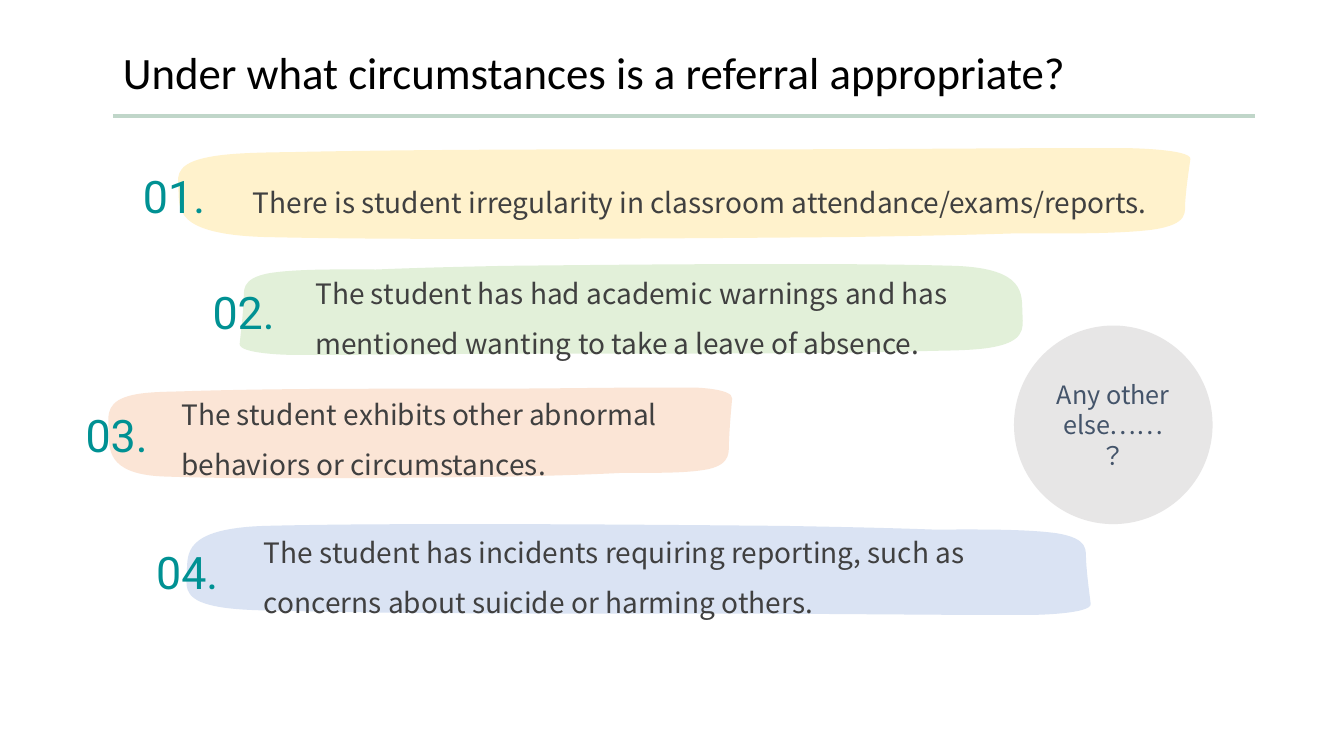
from pptx import Presentation
from pptx.dml.color import RGBColor
from pptx.enum.lang import MSO_LANGUAGE_ID as Lang
from pptx.enum.shapes import MSO_CONNECTOR as Link, MSO_SHAPE as Shape
from pptx.enum.text import MSO_ANCHOR as Anchor, MSO_AUTO_SIZE as Fit, PP_ALIGN as Align
from pptx.oxml.ns import qn
from pptx.util import Pt
from lxml.etree import SubElement

BLACK = RGBColor(0x00, 0x00, 0x00)
GRAY = RGBColor(0x40, 0x40, 0x40)
TEAL = RGBColor(0x00, 0x91, 0x93)
SLATE = RGBColor(0x44, 0x54, 0x6A)
SILVER = RGBColor(0xE7, 0xE6, 0xE6)
SAGE = RGBColor(0xC0, 0xD6, 0xC9)
CREAM = RGBColor(0xFF, 0xF2, 0xCC)
MINT = RGBColor(0xE2, 0xF0, 0xD9)
PEACH = RGBColor(0xFB, 0xE5, 0xD6)
SKY = RGBColor(0xDA, 0xE3, 0xF3)

SANS = "Noto Sans CJK SC"
TITLE = {"name": "Calibri", "size": Pt(32)}
NUMBER = {"name": "Roboto", "size": Pt(32)}
BODY = {"name": SANS, "size": Pt(20)}
ASIDE = {"name": SANS, "size": Pt(18), "language_id": Lang.TRADITIONAL_CHINESE}
PAD = dict.fromkeys(
    ("margin_left", "margin_top", "margin_right", "margin_bottom"), Pt(7.2))
MIDDLE = {"vertical_anchor": Anchor.MIDDLE, **PAD}

BAND = 64.8
START = (870, 0)
PIECES = [
    ((860, 0), (855, 0), (850, 0)),
    ((700, 1),),
    ((512, 2), (320, 0), (132, 4)),
    ((99, 5), (57, 4), (31, 11)),
    ((0, 19), (6, 35), (6, 47)),
    ((7, 67), (2, 95), (91, 98)),
    ((170, 100), (248, 100), (328, 100)),
    ((440, 100), (552, 99), (663, 98)),
    ((717, 97), (772, 96), (826, 94)),
    ((866, 94), (925, 95), (961, 90)),
    ((999, 84), (993, 70), (994, 59)),
    ((995, 43), (997, 28), (999, 12)),
    ((1000, 1), (938, 0), (938, 0)),
    ((938, 0), (910, 0), (870, 0)),
]

ROWS = [
    ("01.", "There is student irregularity in classroom attendance/exams/reports.",
     CREAM, (123.12, 105.84, 727.92), (False, False),
     (173.52, 105.84, 669.6), (95.04, 120.96, 97.92)),
    ("02.", "The student has had academic warnings and has mentioned wanting "
     "to take a leave of absence.",
     MINT, (170.64, 188.64, 563.04), (True, True),
     (218.16, 188.64, 531.36), (144.72, 203.76, 92.16)),
    ("03.", "The student exhibits other abnormal behaviors or circumstances.",
     PEACH, (74.88, 276.84, 448.56), (False, False),
     (122.4, 275.04, 426.96), (54, 291.6, 72.72)),
    ("04.", "The student has incidents requiring reporting, such as concerns "
     "about suicide or harming others.",
     SKY, (129.6, 374.4, 650.16), (False, True),
     (181.44, 373.68, 598.32), (104.4, 389.52, 87.84)),
]


def paint(shape, color):
    shape.shadow.inherit = False
    shape.fill.solid()
    shape.fill.fore_color.rgb = color
    shape.line.fill.background()


def write(shape, text, style, color, frame, para):
    body = shape.text_frame
    for key, value in {"word_wrap": True, **frame}.items():
        setattr(body, key, value)
    line = body.paragraphs[0]
    for key, value in para.items():
        setattr(line, key, value)
    run = line.add_run()
    run.text = text
    for key, value in style.items():
        setattr(run.font, key, value)
    run.font.color.rgb = color
    SubElement(run.font._element, qn("a:ea"), typeface=style["name"])


def label(shapes, box, text, style, color, frame, para):
    item = shapes.add_textbox(*map(Pt, box))
    write(item, text, style, color, frame, para)


def bend(shape):
    lines = iter(list(shape._element.iter(qn("a:lnTo"))))
    for piece in PIECES:
        group = [next(lines) for _ in piece]
        if len(group) == 3:
            head = group[0]
            head.tag = qn("a:cubicBezTo")
            for line in group[1:]:
                head.append(line[0])
                line.getparent().remove(line)


def brush(shapes, place, flip, color):
    left, top, width = place

    def spot(point):
        x, y = point
        x = 1000 - x if flip[0] else x
        y = 100 - y if flip[1] else y
        return Pt(left + width * x / 1000), Pt(top + BAND * y / 100)

    form = shapes.build_freeform(*spot(START))
    form.add_line_segments([spot(point) for piece in PIECES for point in piece])
    shape = form.convert_to_shape()
    bend(shape)
    SubElement(next(shape._element.iter(qn("a:path"))), qn("a:close"))
    paint(shape, color)


def row(slide, mark, text, color, place, flip, words, spot):
    shapes = slide.shapes.add_group_shape().shapes
    brush(shapes, place, flip, color)
    label(shapes, (*words, 65.52), text, BODY, GRAY, MIDDLE, {"line_spacing": 1.5})
    label(shapes, (*spot, 37.44), mark, NUMBER, TEAL, MIDDLE, {})


def bubble(slide, box, text):
    disc = slide.shapes.add_shape(Shape.OVAL, *map(Pt, box))
    paint(disc, SILVER)
    write(disc, text, ASIDE, SLATE,
          {"vertical_anchor": Anchor.MIDDLE}, {"alignment": Align.CENTER})


def rule(slide, left, right, y):
    line = slide.shapes.add_connector(Link.STRAIGHT, *map(Pt, (left, y, right, y)))
    line.line.color.rgb = SAGE
    line.line.width = Pt(3)
    SubElement(line._element.spPr, qn("a:effectLst"))


def main():
    deck = Presentation()
    deck.slide_width, deck.slide_height = Pt(960), Pt(540)
    slide = deck.slides.add_slide(deck.slide_layouts[6])
    for item in ROWS:
        row(slide, *item)
    bubble(slide, (724.32, 232.56, 141.84, 141.84), "Any other else……？")
    rule(slide, 80.64, 896.4, 82.8)
    label(slide.shapes, (80.64, 28.08, 698.4, 46.08),
          "Under what circumstances is a referral appropriate?",
          TITLE, BLACK, {"auto_size": Fit.SHAPE_TO_FIT_TEXT}, {})
    deck.save("out.pptx")


if __name__ == "__main__":
    main()
